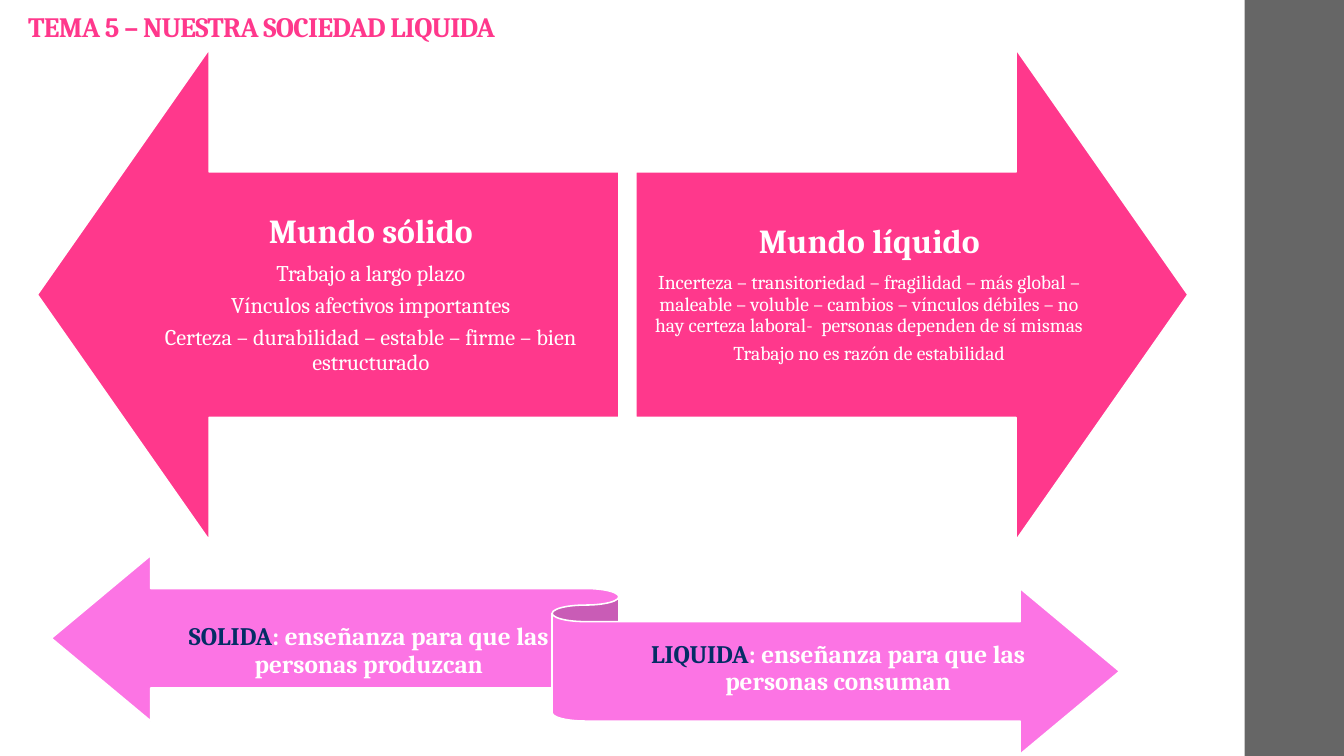
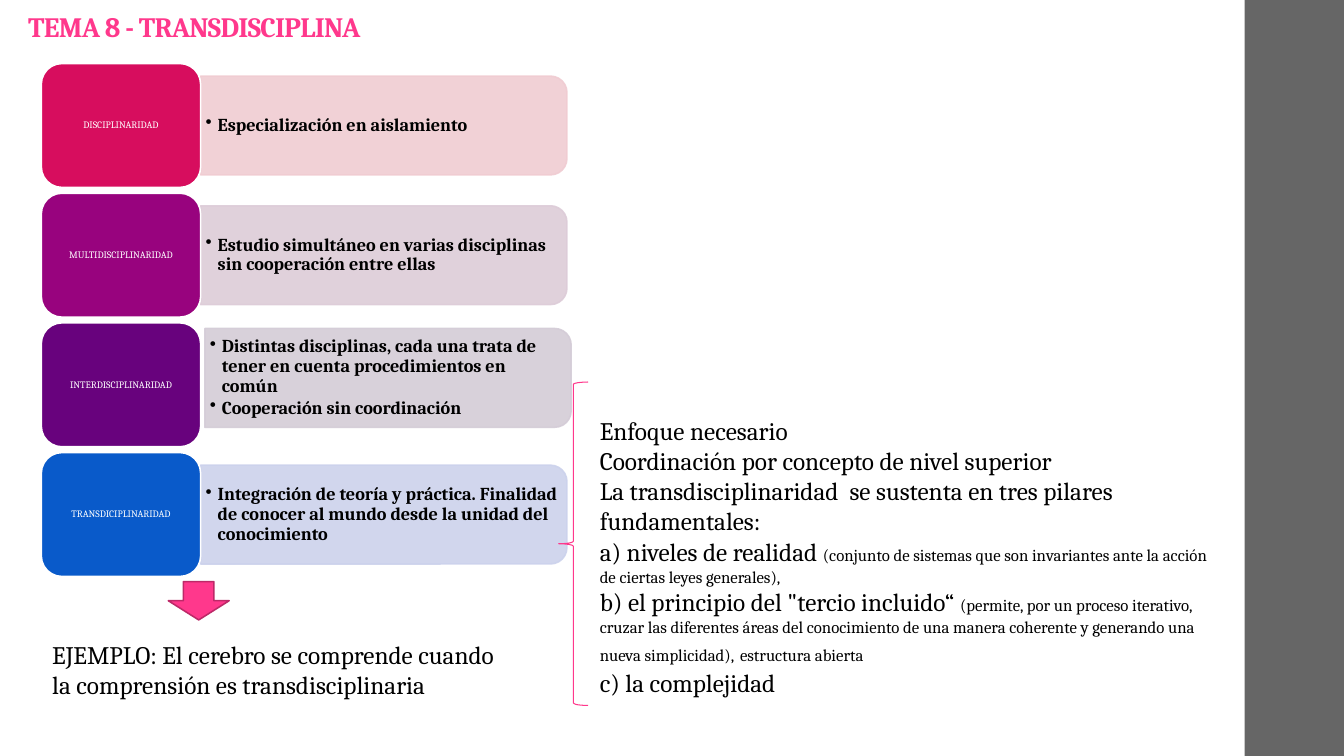
from lxml import etree
from pptx import Presentation
from pptx.dml.color import RGBColor
from pptx.enum import shapes, text
from pptx.oxml import ns
from pptx.util import Pt

FONT = "Cambria"
COLORS = {
    "white": "FFFFFF", "black": "000000", "band": "666666",
    "pink": "FF388C", "pink_edge": "BD2968", "orchid": "FC74E4", "navy": "042D65",
}
SHAPE = shapes.MSO_SHAPE
CENTER = text.PP_ALIGN.CENTER
MIDDLE = text.MSO_ANCHOR.MIDDLE

# label, label fill, bar fill, bar shift (x, y), bullets
LEVELS = [
    ("DISCIPLINARIDAD", "D70D5E", "F0CCD2", (0, 0),
     ["Especialización en aislamiento"]),
    ("MULTIDISCIPLINARIDAD", "98037E", "DDCCD8", (0, 0),
     ["Estudio simultáneo en varias disciplinas sin cooperación entre ellas"]),
    ("INTERDISCIPLINARIDAD", "68027D", "D4CCD7", (3, -5),
     ["Distintas disciplinas, cada una trata de tener en cuenta "
      "procedimientos en común",
      "Cooperación sin coordinación"]),
    ("TRANSDICIPLINARIDAD", "095ACA", "CCD2EC", (0, 0),
     ["Integración de teoría y práctica. Finalidad de conocer al mundo "
      "desde la unidad del conocimiento"]),
]


def rgb(color):
    return RGBColor.from_string(COLORS.get(color, color))


def add_shape(s, kind, box, fill=None, line=None, weight=1.1):
    sp = s.shapes.add_shape(kind, *map(Pt, box))
    sp.shadow.inherit = False
    if fill:
        sp.fill.solid()
        sp.fill.fore_color.rgb = rgb(fill)
    else:
        sp.fill.background()
    if line:
        sp.line.color.rgb = rgb(line)
        sp.line.width = Pt(weight)
    else:
        sp.line.fill.background()
    return sp


def set_frame(sp, insets=(7.2, 3.6), anchor=MIDDLE):
    tf = sp.text_frame
    tf.word_wrap = True
    tf.vertical_anchor = anchor
    tf.margin_left = tf.margin_right = Pt(insets[0])
    tf.margin_top = tf.margin_bottom = Pt(insets[1])
    return tf


def add_text(s, box, insets=(7.2, 3.6), anchor=MIDDLE):
    return set_frame(s.shapes.add_textbox(*map(Pt, box)), insets, anchor)


def add_par(tf, runs, size, color="black", bold=False, align=None,
            spacing=0.9, after=0.0):
    """Add a paragraph; runs is a string or (text, size, color) tuples, None meaning unchanged.

    The space after is a share of the text size.
    """
    first = tf.paragraphs[0]
    p = tf.add_paragraph() if first.runs else first
    p.alignment, p.line_spacing, p.space_after = align, spacing, Pt(size * after)
    p.font.name, p.font.size, p.font.bold = FONT, Pt(size), bold
    p.font.color.rgb = rgb(color)
    for words, run_size, run_color in [(runs, None, None)] if isinstance(runs, str) else runs:
        r = p.add_run()
        r.text = words
        if run_size:
            r.font.size = Pt(run_size)
        if run_color:
            r.font.color.rgb = rgb(run_color)
    return p


def add_bullet(p, indent):
    pPr = p._p.get_or_add_pPr()
    pPr.set("marL", str(Pt(indent)))
    pPr.set("indent", str(-Pt(indent)))
    bullet = etree.Element(ns.qn("a:buChar"), char="•")
    pPr.find(ns.qn("a:defRPr")).addprevious(bullet)


def set_opacity(sp, percent):
    """Make the fill and the line of a shape see-through."""
    for clr in sp._element.spPr.iter(ns.qn("a:srgbClr")):
        etree.SubElement(clr, ns.qn("a:alpha"), val=str(percent * 1000))


def new_slide(prs, title):
    s = prs.slides.add_slide(prs.slide_layouts[6])
    add_shape(s, SHAPE.RECTANGLE, (889, 0, 71, 540), "band")
    tf = add_text(s, (13, 2, 763, 32.5), anchor=text.MSO_ANCHOR.BOTTOM)
    p = add_par(tf, title, 20, "pink", bold=True)
    p.runs[0]._r.get_or_add_rPr().set("spc", "-50")
    return s


def world_arrow(s, kind, box, text_x, text_w, heading, lines, size):
    """Large arrow whose text lies on its shaft, half as high as the arrow."""
    x, y, w, h = box
    arrow = add_shape(s, kind, box, "pink", "white")
    arrow.adjustments[0], arrow.adjustments[1] = 0.5, 0.35
    tf = add_text(s, (x + text_x, y + h / 4, text_w, h / 2), (13.7, 13.7))
    add_par(tf, heading, 24, "white", True, CENTER, after=0.35)
    for line in lines:
        add_par(tf, line, size, "white", align=CENTER, after=0.35)


def teaching_ribbon(s, box):
    x, y, w, h = box
    add_shape(s, SHAPE.LEFT_RIGHT_RIBBON, box, "orchid", "white")
    for dx, dy, width, height, word, goal in [
        (91.5, -6.5, 270.5, 150, "SOLIDA", "produzcan"),
        (394.5, 36.5, 335, 89.5, "LIQUIDA", "consuman"),
    ]:
        tf = add_text(s, (x + dx, y + dy, width, height), (0, 5))
        runs = [(word, None, "navy"),
                (f": enseñanza para que las personas {goal}", None, None)]
        add_par(tf, runs, 18, "white", True, CENTER, after=0.35)


def level_row(s, box, label, label_fill, bar_fill, shift, bullets):
    """Rounded label with a bar of bullets to its right."""
    x, y, w, h = box
    label_w, bar_h = 113.8, 70.6
    bar_w = w - label_w
    bar_x = x + label_w + shift[0]
    bar_y = y + (h - bar_h) / 2 + shift[1]
    turned = (bar_x + (bar_w - bar_h) / 2, bar_y + (bar_h - bar_w) / 2, bar_h, bar_w)
    bar = add_shape(s, SHAPE.ROUND_2_SAME_RECTANGLE, turned, bar_fill, bar_fill)
    bar.rotation = 90
    set_opacity(bar, 90)
    tf = add_text(s, (bar_x, bar_y, bar_w - 3.5, bar_h), (3.6, 2))
    for bullet in bullets:
        add_bullet(add_par(tf, bullet, 13, bold=True, after=0.15), 8.64)

    tag = add_shape(s, SHAPE.ROUNDED_RECTANGLE, (x, y, label_w, h), label_fill, "white")
    add_par(set_frame(tag, (2, 1)), label, 7, "white", align=CENTER)


def level_list(s, box):
    x, y, w, h = box
    row_h = 88.5
    pitch = (h - row_h) / (len(LEVELS) - 1)
    for i, level in enumerate(LEVELS):
        level_row(s, (x, y + i * pitch, w, row_h), *level)


def pillars(s, box):
    """Brace followed by the notes on the last level."""
    x, y, w, h = box
    add_shape(s, SHAPE.LEFT_BRACE, (x, y, 21, h), line="pink", weight=0.75)
    tf = add_text(s, (x + 22.3, y + 20, w - 22.3, 218), anchor=text.MSO_ANCHOR.TOP)
    for runs in [
        "Enfoque necesario",
        "Coordinación por concepto de nivel superior",
        "La transdisciplinaridad  se sustenta en tres pilares fundamentales:",
        [("a) niveles de realidad ", None, None),
         ("(conjunto de sistemas que son invariantes ante la acción de ciertas "
          "leyes generales),", 12, None)],
        [("b) el principio del \"tercio incluido“ ", None, None),
         ("(permite, por un proceso iterativo, cruzar las diferentes áreas del "
          "conocimiento de una manera coherente y generando una nueva "
          "simplicidad),", 12, None),
         (" ", None, None),
         ("estructura abierta", 12, None)],
        "c) la complejidad",
    ]:
        add_par(tf, runs, 18, spacing=1.0)


def example(s, box):
    x, y, w, h = box
    add_shape(s, SHAPE.DOWN_ARROW, (x + 90, y, 43.5, 27.4), "pink", "pink_edge")
    tf = add_text(s, (x, y + 37.5, w, h - 37.5), anchor=text.MSO_ANCHOR.TOP)
    add_par(tf, "EJEMPLO: El cerebro se comprende cuando la comprensión es "
                "transdisciplinaria", 18, spacing=1.0)


def liquid_society(prs):
    s = new_slide(prs, "TEMA 5 – NUESTRA SOCIEDAD LIQUIDA")
    world_arrow(s, SHAPE.LEFT_ARROW, (26.7, 35.2, 415.3, 350.6), 61.2, 354, "Mundo sólido",
                ["Trabajo a largo plazo", "Vínculos afectivos importantes",
                 "Certeza – durabilidad – estable – firme – bien estructurado"], 16)
    world_arrow(s, SHAPE.RIGHT_ARROW, (454.2, 35.2, 394.3, 350.6), 0, 333.4, "Mundo líquido",
                ["Incerteza – transitoriedad – fragilidad – más global – maleable – "
                 "voluble – cambios – vínculos débiles – no hay certeza laboral-  "
                 "personas dependen de sí mismas",
                 "Trabajo no es razón de estabilidad"], 14)
    teaching_ribbon(s, (36.7, 396.7, 763, 142))


def transdiscipline(prs):
    s = new_slide(prs, "TEMA 8 - TRANSDISCIPLINA")
    level_list(s, (29.5, 45.4, 375.5, 366.4))
    pillars(s, (399, 272.9, 473.5, 231))
    example(s, (30.2, 415.4, 346.3, 110))


def main():
    prs = Presentation()
    prs.slide_width, prs.slide_height = Pt(960), Pt(540)
    liquid_society(prs)
    transdiscipline(prs)
    prs.save("out.pptx")


if __name__ == "__main__":
    main()
